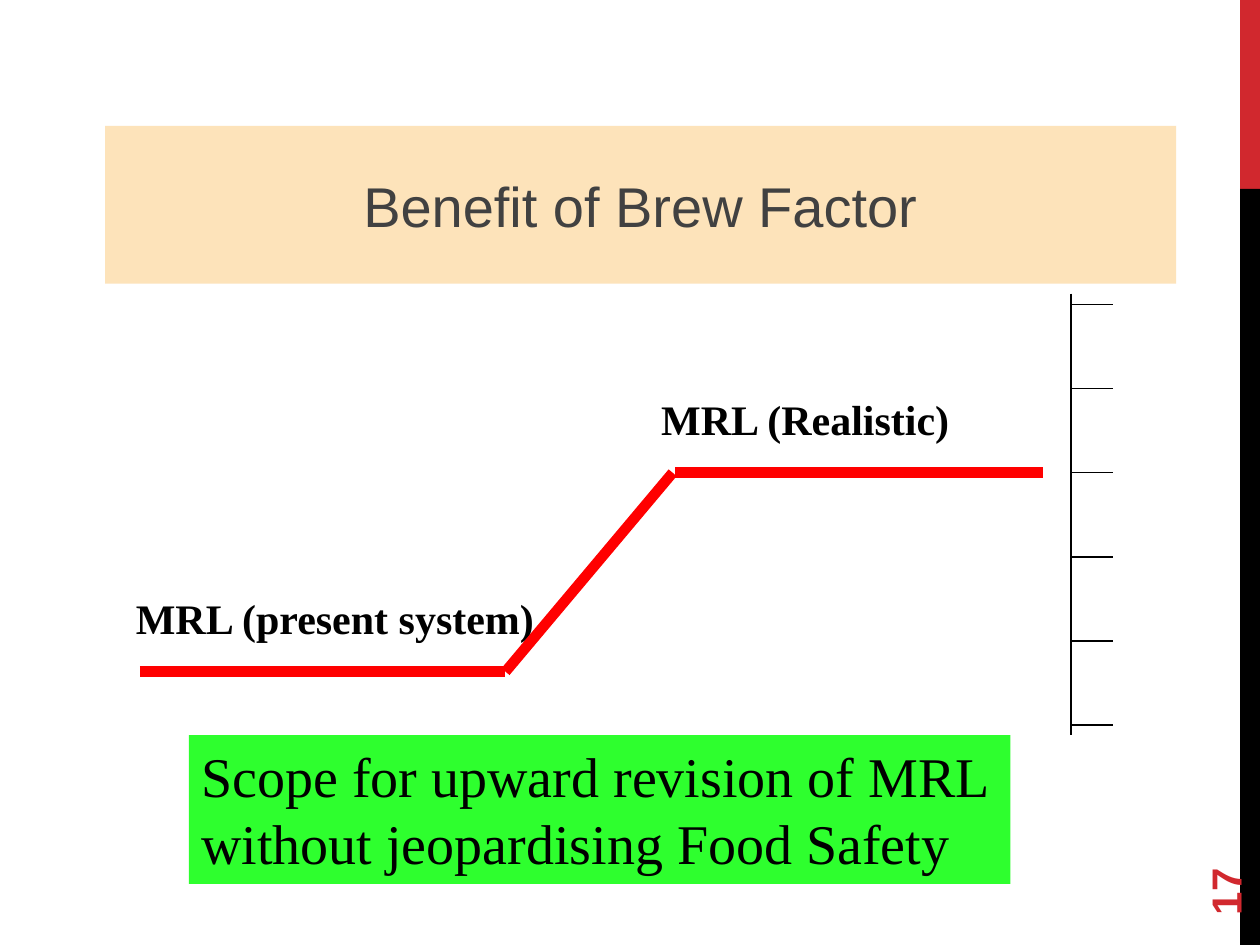
"""Build the slide on the benefit of the brew factor."""
from lxml.etree import SubElement as Sub
from pptx import Presentation
from pptx.dml.color import RGBColor as Rgb
from pptx.enum.shapes import MSO_CONNECTOR as Link, MSO_SHAPE as Form
from pptx.enum.text import MSO_ANCHOR as Anchor, MSO_AUTO_SIZE as Fit, PP_ALIGN as Align
from pptx.oxml.ns import qn
from pptx.util import Cm, Pt

HUES = {"red": "D1282E", "black": "000000", "sand": "FDE3BA", "grey": "414141",
        "line": "FF0000", "green": "00FF00"}
SANS, SERIF = "Arial", "Times New Roman"

BARS = [((25, 0, 0.4, 3.81), "red"), ((25, 3.81, 0.4, 15.24), "black")]
TITLE = ((2.12, 2.54, 21.59, 3.18), ["Benefit of Brew Factor"])
SCOPE = ((3.81, 14.82, 16.56, 3), ["Scope for upward revision of MRL",
                                   "without jeopardising Food Safety"])
LABELS = [((2.49, 11.81, 9.65, 1.27), ["MRL (present system)"]),
          ((13.08, 7.8, 7.42, 1.27), ["MRL (Realistic)"])]
PAGE = ((22.86, 16.36, 3.66, 1.02), ["17"])

LOW, HIGH = 13.54, 9.53
STEPS = [(2.82, LOW, 10.19, LOW), (13.56, HIGH, 10.19, LOW), (13.61, HIGH, 21.03, HIGH)]
AXIS = (21.59, 5.92, 21.59, 14.82)
TICKS = {"count": 6, "first": 6.14, "last": 14.61, "size": 0.85}

HEAD = {"name": SANS, "size": Pt(32), "hue": "grey"}
BODY = {"name": SERIF, "size": Pt(32), "hue": "black"}
LABEL = {"name": SERIF, "size": Pt(24), "bold": True, "hue": "black"}
FOLIO = {"name": SANS, "size": Pt(24), "bold": True, "hue": "red"}
MID = {"vertical_anchor": Anchor.MIDDLE, "word_wrap": True}
GROW = {"vertical_anchor": Anchor.TOP, "word_wrap": False, "auto_size": Fit.SHAPE_TO_FIT_TEXT}


def tint(hue):
    return Rgb.from_string(HUES[hue])


def scale(box):
    return [Cm(n) for n in box]


def write(shape, rows, font, frame, align=Align.LEFT):
    text = shape.text_frame
    for key, val in frame.items():
        setattr(text, key, val)
    text.text = "\n".join(rows)
    for para in text.paragraphs:
        para.alignment = align
        face = para.runs[0].font
        for key, val in font.items():
            if key == "hue":
                face.color.rgb = tint(val)
            else:
                setattr(face, key, val)


def block(pool, box, hue):
    shape = pool.add_shape(Form.RECTANGLE, *scale(box))
    shape.shadow.inherit = False
    shape.fill.solid()
    shape.fill.fore_color.rgb = tint(hue)
    shape.line.fill.background()
    return shape


def label(pool, box, rows, font, frame):
    shape = pool.add_textbox(*scale(box))
    write(shape, rows, font, frame)
    return shape


def rule(pool, ends, hue, width):
    line = pool.add_connector(Link.STRAIGHT, *scale(ends))
    line.line.color.rgb = tint(hue)
    line.line.width = Pt(width)
    Sub(line._element.spPr, qn("a:effectLst"))


def main():
    deck = Presentation()
    deck.slide_width, deck.slide_height = Cm(25.4), Cm(19.05)
    pool = deck.slides.add_slide(deck.slide_layouts[6]).shapes

    for box, hue in BARS:
        block(pool, box, hue)
    box, rows = TITLE
    write(block(pool, box, "sand"), rows, HEAD, MID, Align.CENTER)
    for box, rows in LABELS:
        label(pool, box, rows, LABEL, GROW)

    for ends in STEPS:
        rule(pool, ends, "line", 6)
    rule(pool, AXIS, "black", 1)
    left = AXIS[0]
    gap = (TICKS["last"] - TICKS["first"]) / (TICKS["count"] - 1)
    for k in range(TICKS["count"]):
        y = TICKS["first"] + k * gap
        rule(pool, (left, y, left + TICKS["size"], y), "black", 1)

    box, rows = SCOPE
    scope = block(pool, box, "green")
    write(scope, rows, BODY, GROW)
    color = scope._element.spPr.find(qn("a:solidFill")).find(qn("a:srgbClr"))
    Sub(color, qn("a:alpha"), val="82000")

    label(pool, *PAGE, FOLIO, MID).rotation = 270
    deck.save("out.pptx")


if __name__ == "__main__":
    main()
